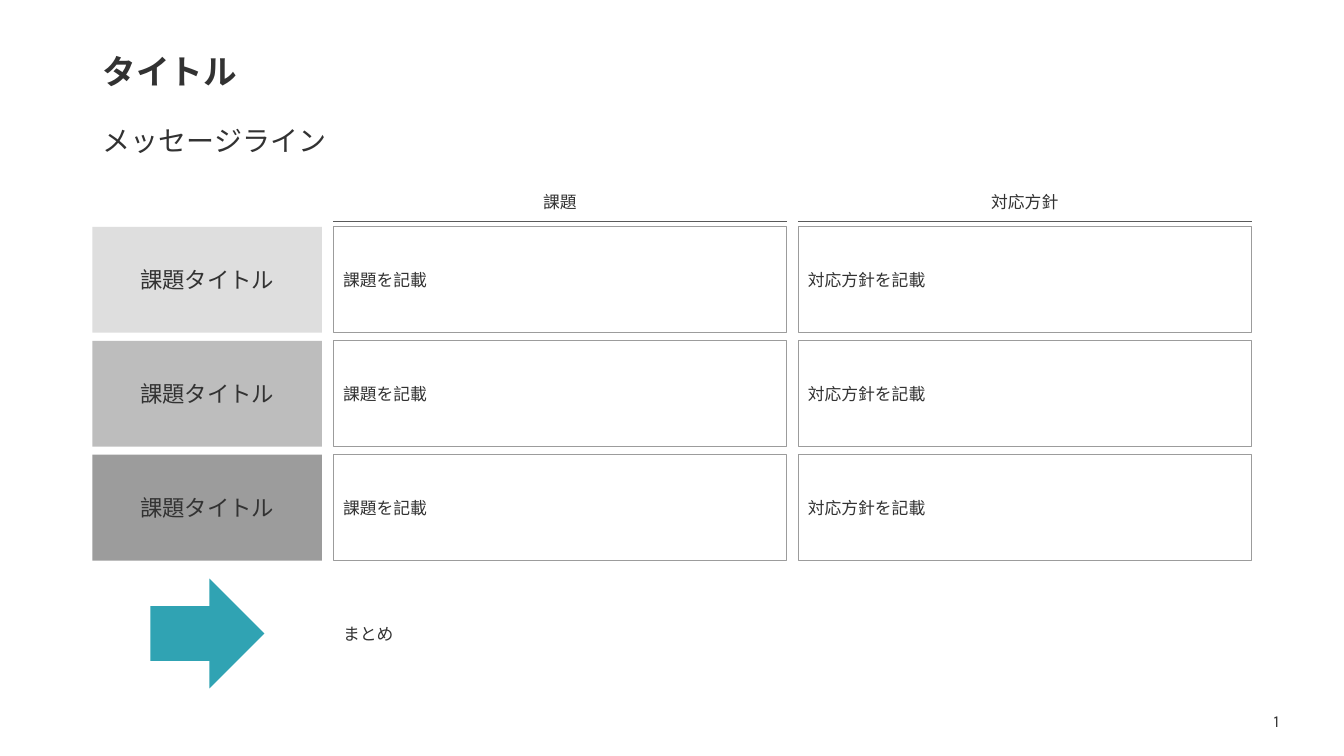
from dataclasses import dataclass

from lxml.etree import SubElement
from pptx import Presentation
from pptx.dml.color import RGBColor
from pptx.enum.shapes import MSO_CONNECTOR, MSO_SHAPE
from pptx.enum.text import MSO_ANCHOR, PP_ALIGN
from pptx.oxml.ns import qn
from pptx.util import Pt

FONT = "Karla"
INK, RULE, EDGE, TEAL = "323232", "5A5A5A", "9C9C9C", "30A3B3"

# Grid: label column, then two equal columns up to the right margin
LEFT, WIDE, GAP = 66, 828, 8
LABEL, COL = 164, 324
TOP, HIGH, PITCH = 162, 75.6, 81.4
BODY = LEFT + LABEL + GAP


@dataclass
class Box:
    left: float
    top: float
    width: float
    height: float

    def points(self) -> tuple:
        return Pt(self.left), Pt(self.top), Pt(self.width), Pt(self.height)


@dataclass
class Column:
    head: str
    text: str


COLUMNS = [Column("課題", "課題を記載"), Column("対応方針", "対応方針を記載")]
SHADES = ["DEDEDE", "BDBDBD", "9C9C9C"]


def color(code: str) -> RGBColor:
    return RGBColor.from_string(code)


def write(shape, text: str, size: float, align=PP_ALIGN.LEFT, bold: bool = False):
    frame = shape.text_frame
    frame.word_wrap = True
    frame.vertical_anchor = MSO_ANCHOR.MIDDLE
    line = frame.paragraphs[0]
    line.text = text
    line.alignment = align
    line.font.name = FONT
    line.font.size = Pt(size)
    line.font.bold = bold
    line.font.color.rgb = color(INK)
    return line


def fill_holder(holder, box: Box, text: str, size: float, bold: bool = False):
    holder.left, holder.top, holder.width, holder.height = box.points()
    line = write(holder, text, size, bold=bold)
    line.line_spacing = 0.9
    return line


def add_text(slide, box: Box, text: str, size: float, align=PP_ALIGN.LEFT) -> None:
    write(slide.shapes.add_textbox(*box.points()), text, size, align)


def add_block(slide, box: Box, fill: str = "", edge: str = "",
              kind=MSO_SHAPE.RECTANGLE):
    shape = slide.shapes.add_shape(kind, *box.points())
    shape.shadow.inherit = False
    if fill:
        shape.fill.solid()
        shape.fill.fore_color.rgb = color(fill)
    else:
        shape.fill.background()
    if edge:
        shape.line.color.rgb = color(edge)
        shape.line.width = Pt(0.5)
    else:
        shape.line.fill.background()
    return shape


def add_rule(slide, left: float, top: float, width: float) -> None:
    rule = slide.shapes.add_connector(
        MSO_CONNECTOR.STRAIGHT, Pt(left), Pt(top), Pt(left + width), Pt(top))
    rule.line.color.rgb = color(RULE)
    rule.line.width = Pt(0.5)
    SubElement(rule._element.spPr, qn("a:effectLst"))


def main() -> None:
    deck = Presentation()
    deck.slide_width, deck.slide_height = Pt(960), Pt(540)
    slide = deck.slides.add_slide(deck.slide_layouts[1])

    # Title and message line
    fill_holder(slide.shapes.title, Box(LEFT, 28.8, WIDE, 48), "タイトル", 24, True)
    lead = fill_holder(slide.placeholders[1], Box(LEFT, 77.8, WIDE, 48),
                       "メッセージライン", 20)
    lead.space_before = Pt(10)
    props = lead._p.get_or_add_pPr()
    props.set("marL", "0")
    props.set("indent", "0")
    SubElement(props, qn("a:buNone"))

    # Row labels
    tops = [TOP + PITCH * row for row in range(len(SHADES))]
    for top, shade in zip(tops, SHADES):
        label = add_block(slide, Box(LEFT, top, LABEL, HIGH), fill=shade)
        write(label, "課題タイトル", 16, PP_ALIGN.CENTER)

    # Columns: heading, rule and cells
    for place, column in enumerate(COLUMNS):
        left = BODY + (COL + GAP) * place
        add_text(slide, Box(left, 133.2, COL, 21.6), column.head, 12, PP_ALIGN.CENTER)
        add_rule(slide, left, 158.4, COL)
        for top in tops:
            cell = add_block(slide, Box(left, top, COL, HIGH), edge=EDGE)
            write(cell, column.text, 12)

    # Summary and page number
    add_block(slide, Box(107.5, 413.3, 81.4, 78.5), fill=TEAL,
              kind=MSO_SHAPE.RIGHT_ARROW)
    add_text(slide, Box(BODY, 414.7, LEFT + WIDE - BODY, HIGH), "まとめ", 12)
    add_text(slide, Box(LEFT + WIDE, 500.4, 35.3, 28.8), "1", 12, PP_ALIGN.CENTER)

    deck.save("out.pptx")


if __name__ == "__main__":
    main()
